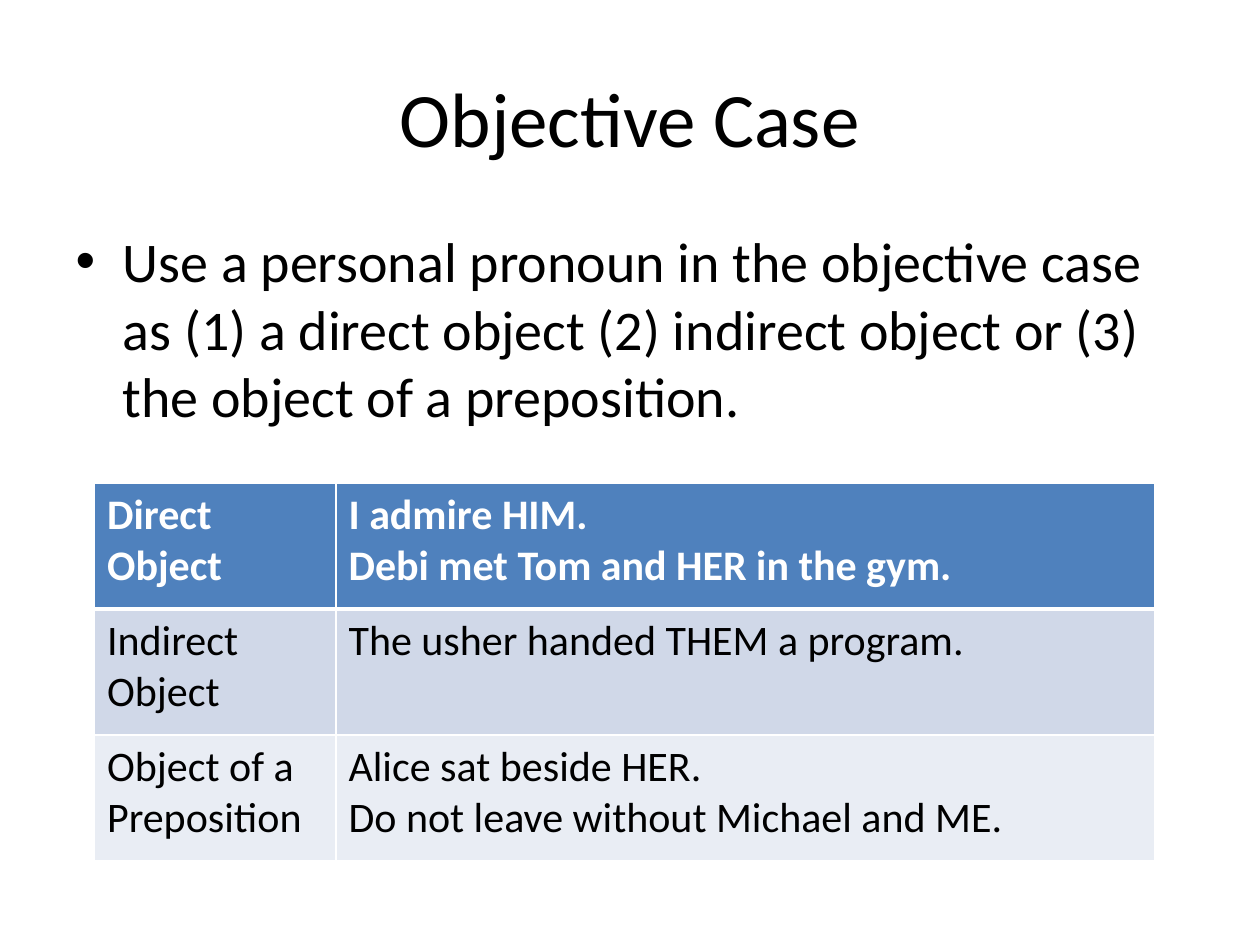
from pptx import Presentation
from pptx.dml.color import RGBColor as RGB
from pptx.enum.text import MSO_ANCHOR as Anchor, PP_ALIGN as Align
from pptx.oxml.ns import qn
from pptx.util import Pt
from lxml.etree import SubElement as Sub

# Content
TITLE = "Objective Case"
BODY = ("Use a personal pronoun in the objective case as (1) a direct object "
        "(2) indirect object or (3) the object of a preposition.")
ROWS = [
    ("Direct Object", "I admire HIM.\nDebi met Tom and HER in the gym."),
    ("Indirect Object", "The usher handed THEM a program."),
    ("Object of a Preposition",
     "Alice sat beside HER.\nDo not leave without Michael and ME."),
]

# Theme and layout, in points
THEME = {
    "font": "Calibri", "ink": "000000", "light": "FFFFFF",
    "head": "4F81BD", "bands": ("D0D8E8", "E9EDF4"),
    "title": 44, "body": 32, "cell": 24, "rule": 1, "thick": 3,
}
BOX = {
    "title": (36, 21.6, 648, 90),
    "body": (36, 126, 648, 356.4),
    "table": (54, 276, 606, 216),
}
COLS = (138, 468)


def style(frame, size, color, bold=False):
    form = {"name": THEME["font"], "size": Pt(size), "bold": bold}
    for par in frame.paragraphs:
        for run in par.runs:
            for key, val in form.items():
                setattr(run.font, key, val)
            run.font.color.rgb = RGB.from_string(color)


def place(shape, box):
    for key, val in zip(("left", "top", "width", "height"), box):
        setattr(shape, key, Pt(val))


def edge(cell, side, width):
    line = Sub(cell._tc.get_or_add_tcPr(), qn("a:ln" + side), w=str(Pt(width)))
    fill = Sub(line, qn("a:solidFill"))
    Sub(fill, qn("a:srgbClr"), val=THEME["light"])


deck = Presentation()
deck.slide_width, deck.slide_height = Pt(720), Pt(540)
slide = deck.slides.add_slide(deck.slide_layouts[1])

# Title
title = slide.shapes.title
place(title, BOX["title"])
title.text_frame.text = TITLE
title.text_frame.vertical_anchor = Anchor.MIDDLE
title.text_frame.paragraphs[0].alignment = Align.CENTER
style(title.text_frame, THEME["title"], THEME["ink"])

# Bulleted rule
body = slide.placeholders[1]
place(body, BOX["body"])
body.text_frame.text = BODY
style(body.text_frame, THEME["body"], THEME["ink"])

# Table of examples
grid = slide.shapes.add_table(len(ROWS), len(COLS), *map(Pt, BOX["table"])).table
for col, width in zip(grid.columns, COLS):
    col.width = Pt(width)
for r, row in enumerate(ROWS):
    head = r == 0
    back = THEME["head"] if head else THEME["bands"][(r - 1) % 2]
    rules = {"L": "rule", "R": "rule",
             "T": "thick" if r == 1 else "rule",
             "B": "thick" if head else "rule"}
    for c, text in enumerate(row):
        cell = grid.cell(r, c)
        cell.text = text
        style(cell.text_frame, THEME["cell"],
              THEME["light" if head else "ink"], head)
        for side, rule in rules.items():
            edge(cell, side, THEME[rule])
        cell.fill.solid()
        cell.fill.fore_color.rgb = RGB.from_string(back)

deck.save("out.pptx")
